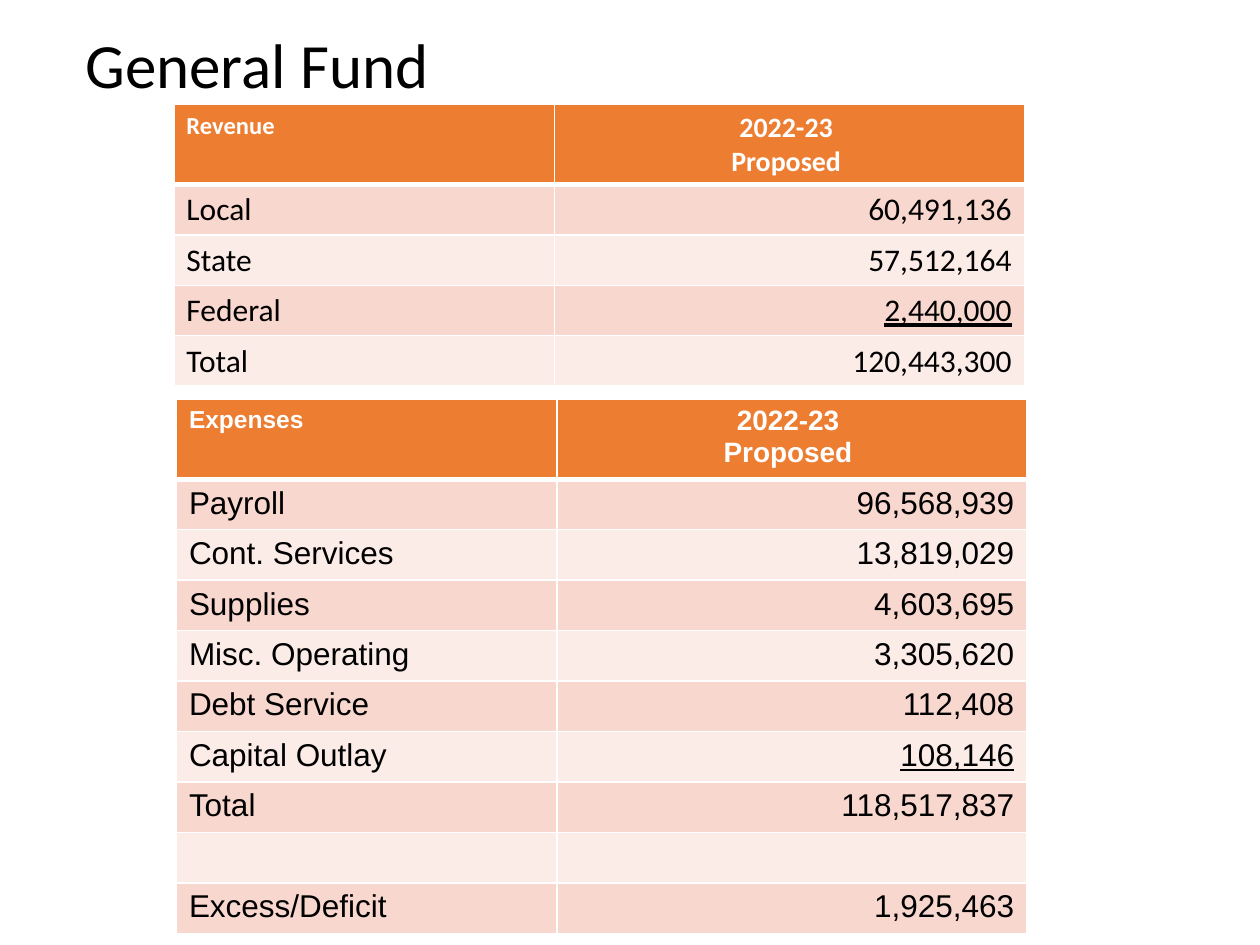
import pptx
import pptx.util
import pptx.dml.color
import pptx.enum.text
import pptx.oxml
import pptx.oxml.ns
from pptx.util import Inches

COLORS = {"header": "ED7D31", "odd": "F8D7CE", "even": "FCECE8",
          "white": "FFFFFF", "black": "000000"}
ALIGN = pptx.enum.text.PP_ALIGN


def add_run(p, text, font, size, color, bold=False, underline=False):
    r = p.add_run()
    r.text = text
    r.font.name = font
    r.font.size = pptx.util.Pt(size)
    r.font.bold = bold
    if underline:
        r.font.underline = True
    r.font.color.rgb = pptx.dml.color.RGBColor.from_string(COLORS[color])


def style_cell(cell, fill, top, bottom):
    cell.fill.solid()
    cell.fill.fore_color.rgb = pptx.dml.color.RGBColor.from_string(COLORS[fill])
    tcPr = cell._tc.get_or_add_tcPr()
    for i, (side, width) in enumerate(zip("LRTB", (1, 1, top, bottom))):
        ln = pptx.oxml.parse_xml(
            f'<a:ln{side} {pptx.oxml.ns.nsdecls("a")} w="{pptx.util.Pt(width)}">'
            f'<a:solidFill><a:srgbClr val="{COLORS["white"]}"/></a:solidFill></a:ln{side}>')
        tcPr.insert(i, ln)


prs = pptx.Presentation()
prs.slide_width = Inches(10)
prs.slide_height = Inches(7.5)
s = prs.slides.add_slide(prs.slide_layouts[6])

sp = s.shapes.add_textbox(Inches(0.58), Inches(0.08), Inches(8.95), Inches(0.92))
tf = sp.text_frame
tf.word_wrap = True
tf.vertical_anchor = pptx.enum.text.MSO_ANCHOR.MIDDLE
p = tf.paragraphs[0]
p.line_spacing = 0.9
add_run(p, "General Fund", "Calibri", 36, "black")

revenue = [("Local", "60,491,136"), ("State", "57,512,164"),
           ("Federal", "2,440,000"), ("Total", "120,443,300")]
expenses = [("Payroll", "96,568,939"), ("Cont. Services", "13,819,029"),
            ("Supplies", "4,603,695"), ("Misc. Operating", "3,305,620"),
            ("Debt Service", "112,408"), ("Capital Outlay", "108,146"),
            ("Total", "118,517,837"), ("", ""), ("Excess/Deficit", "1,925,463")]
tables = [("Revenue", revenue, "Calibri", 1.38, 0.83, 0.63, 0.4),
          ("Expenses", expenses, "Arial", 1.4, 3.17, 0.58, 0.38)]

for heading, rows, font, left, top, header_h, row_h in tables:
    height = header_h + row_h * len(rows)
    tbl = s.shapes.add_table(len(rows) + 1, 2, Inches(left), Inches(top),
                             Inches(6.75), Inches(height)).table
    tbl.columns[0].width = Inches(3.02)
    tbl.columns[1].width = Inches(3.73)
    tbl.rows[0].height = Inches(header_h)
    for c in range(2):
        style_cell(tbl.cell(0, c), "header", 1, 3)
    add_run(tbl.cell(0, 0).text_frame.paragraphs[0], heading, font, 14, "white", bold=True)
    tf = tbl.cell(0, 1).text_frame
    for p, text in ((tf.paragraphs[0], "2022-23 "), (tf.add_paragraph(), "Proposed ")):
        p.alignment = ALIGN.CENTER
        add_run(p, text, font, 16, "white", bold=True)

    for i, row in enumerate(rows, 1):
        tbl.rows[i].height = Inches(row_h)
        before_total = i < len(rows) and rows[i][0] == "Total"
        for c, text in enumerate(row):
            cell = tbl.cell(i, c)
            style_cell(cell, "odd" if i % 2 else "even", 3 if i == 1 else 1, 1)
            p = cell.text_frame.paragraphs[0]
            p.alignment = ALIGN.RIGHT if c else ALIGN.LEFT
            if text:
                add_run(p, text, font, 18, "black", underline=before_total and c == 1)

prs.save("out.pptx")
